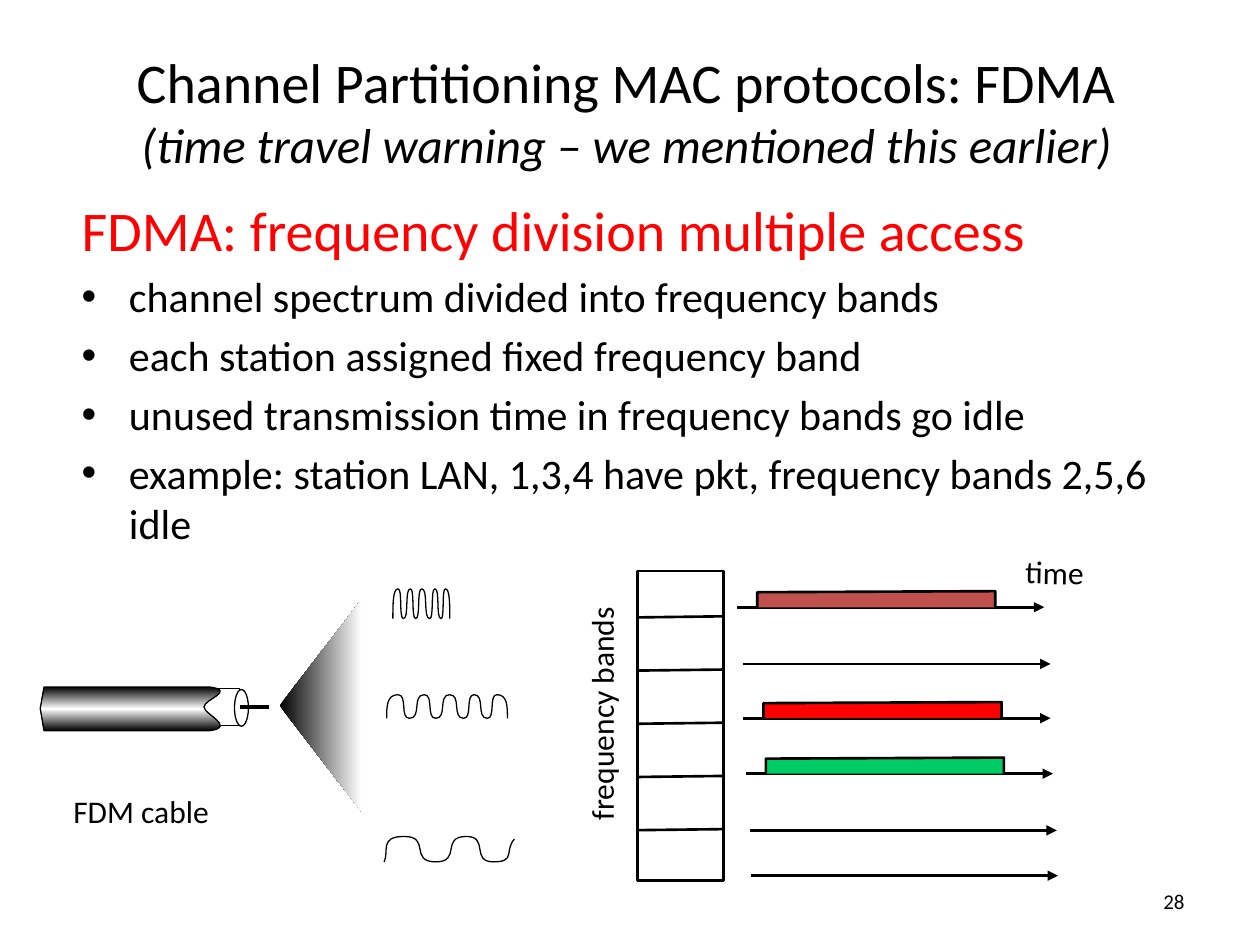
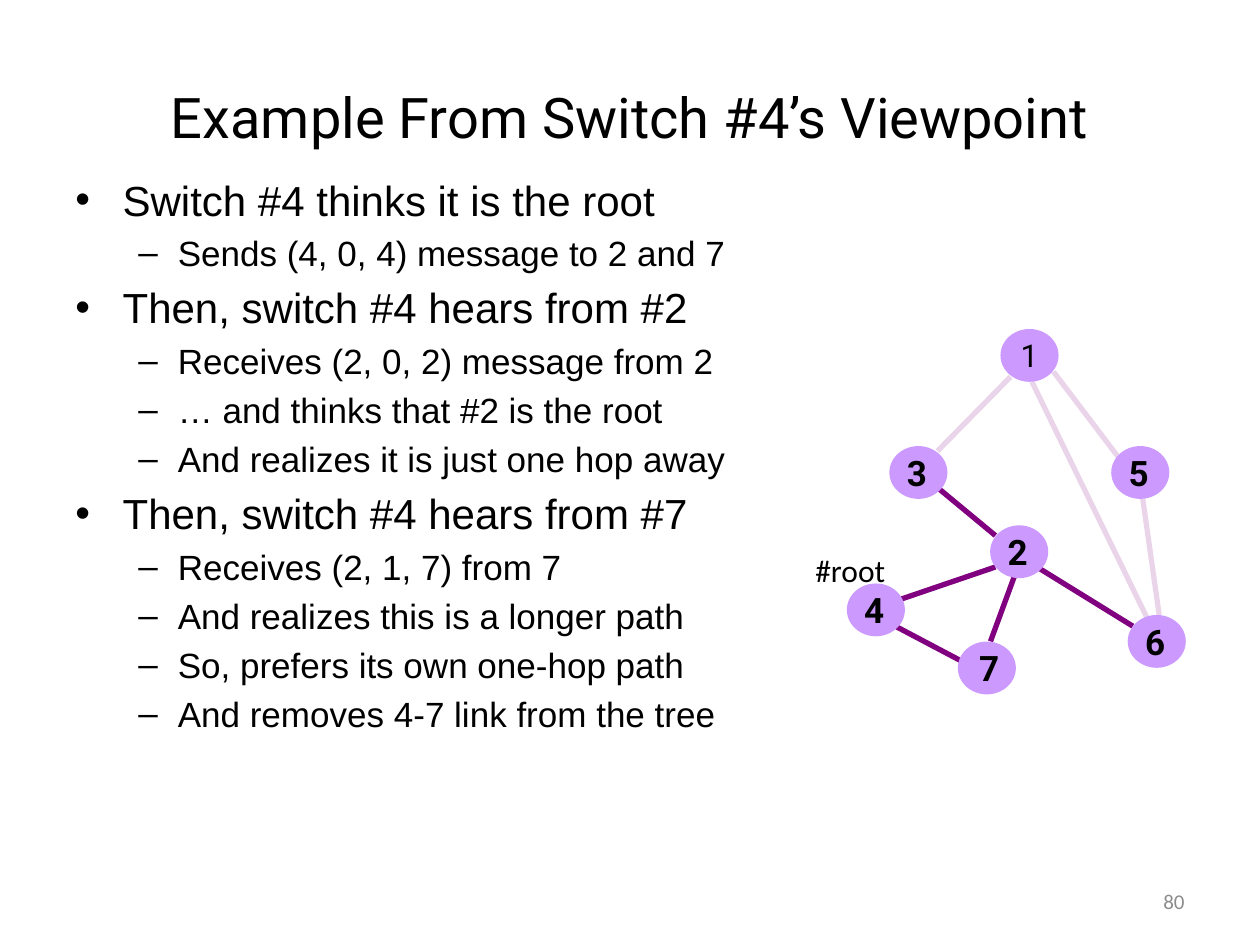
from dataclasses import dataclass
from itertools import pairwise

from lxml.etree import SubElement
from pptx import Presentation
from pptx.dml.color import RGBColor
from pptx.enum.shapes import MSO_CONNECTOR, MSO_SHAPE
from pptx.enum.text import MSO_ANCHOR, MSO_AUTO_SIZE, PP_ALIGN
from pptx.oxml.ns import qn
from pptx.util import Pt


@dataclass(frozen=True)
class Theme:
    black: str = "000000"
    white: str = "FFFFFF"
    red: str = "FF0000"
    brick: str = "C0504D"
    green: str = "00CC66"
    grey: str = "8C8C8C"
    node: str = "CC99FF"
    edge: str = "800080"
    font: str = "Calibri"
    node_font: str = "Roboto"
    body_font: str = "Arial"
    title: int = 32
    subtitle: int = 28
    body: int = 24
    detail: int = 20
    label: int = 18
    footer: int = 12
    thin: float = 0.75
    line: float = 1.5
    cable_core: float = 2.25
    edge_width: float = 3


THEME = Theme()


# Text
def write_text(paragraph, text, size=THEME.label, font=THEME.font, color=THEME.black,
               bold=False, italic=False, align=PP_ALIGN.LEFT):
    paragraph.alignment = align
    run = paragraph.add_run()
    run.text = text
    run.font.size = Pt(size)
    run.font.name = font
    run.font.bold = bold
    run.font.italic = italic
    run.font.color.rgb = RGBColor.from_string(color)


def add_box(slide, left, top, width, height, wrap=True):
    shape = slide.shapes.add_textbox(Pt(left), Pt(top), Pt(width), Pt(height))
    shape.text_frame.word_wrap = wrap
    return shape


def add_label(slide, text, left, top, width, height=29, rotation=0, wrap=False,
              **text_format):
    shape = add_box(slide, left, top, width, height, wrap)
    shape.rotation = rotation
    write_text(shape.text_frame.paragraphs[0], text, **text_format)


def place_title(slide, left, top, width, height=90):
    title = slide.shapes.title
    title.left, title.top, title.width, title.height = map(Pt, (left, top, width, height))
    frame = title.text_frame
    frame.auto_size = MSO_AUTO_SIZE.NONE
    frame.vertical_anchor = MSO_ANCHOR.MIDDLE
    return frame.paragraphs[0]


def add_page_number(slide, number, color):
    frame = add_box(slide, 516, 500.5, 168, 29).text_frame
    frame.vertical_anchor = MSO_ANCHOR.MIDDLE
    write_text(frame.paragraphs[0], number, size=THEME.footer, color=color,
               align=PP_ALIGN.RIGHT)


def add_body(slide, box, lines):
    """Each line is (text, bullet, text format); a dash marks the second level."""
    frame = add_box(slide, *box).text_frame
    for index, (text, bullet, text_format) in enumerate(lines):
        paragraph = frame.add_paragraph() if index else frame.paragraphs[0]
        paragraph.space_before = Pt(text_format["size"] * 0.2)
        write_text(paragraph, text, **text_format)
        second_level = bullet == "–"
        paragraph.level = int(second_level)
        properties = paragraph._p.get_or_add_pPr()
        properties.set("marL", str(Pt(58.5 if second_level else 27)))
        properties.set("indent", str(Pt(-22.5 if second_level else -27)))
        if bullet:
            SubElement(properties, qn("a:buFont"), typeface="Arial")
            SubElement(properties, qn("a:buChar"), char=bullet)


# Shapes and lines
def style_shape(shape, fill=None, line=None):
    shape.shadow.inherit = False
    if isinstance(fill, str):
        shape.fill.solid()
        shape.fill.fore_color.rgb = RGBColor.from_string(fill)
    elif fill is None:
        shape.fill.background()
    if line:
        shape.line.color.rgb = RGBColor.from_string(THEME.black)
        shape.line.width = Pt(line)
    else:
        shape.line.fill.background()
    return shape


def add_preset(slide, kind, left, top, width, height, fill, line=None):
    shape = slide.shapes.add_shape(kind, Pt(left), Pt(top), Pt(width), Pt(height))
    return style_shape(shape, fill, line)


def add_outline(slide, start, segments, fill=None, line=None, gradient=None, angle=0,
                close=False):
    """A segment of one point is straight; one of three points is a cubic curve."""
    builder = slide.shapes.build_freeform(*map(Pt, start))
    points = [(Pt(x), Pt(y)) for segment in segments for x, y in segment]
    builder.add_line_segments(points, close=close)
    shape = builder.convert_to_shape()
    steps = iter(list(shape._element.spPr.iter(qn("a:lnTo"))))
    for segment in segments:
        step = next(steps)
        if len(segment) == 3:
            step.tag = qn("a:cubicBezTo")
            for _ in range(2):
                control = next(steps)
                step.append(control[0])
                control.getparent().remove(control)
    if gradient:
        set_gradient(shape, gradient, angle)
    return style_shape(shape, gradient or fill, line)


def set_gradient(shape, colors, angle):
    shape.fill.gradient()
    shape.fill.gradient_angle = angle
    stops = shape._element.spPr.find(qn("a:gradFill")).find(qn("a:gsLst"))
    stops.clear()
    for index, color in enumerate(colors):
        position = 100000 * index // (len(colors) - 1)
        stop = SubElement(stops, qn("a:gs"), pos=str(position))
        SubElement(stop, qn("a:srgbClr"), val=color)


def add_line(slide, start, end, color=THEME.black, width=THEME.line, opacity=None,
             arrow=False):
    connector = slide.shapes.add_connector(
        MSO_CONNECTOR.STRAIGHT, *map(Pt, (*start, *end)))
    connector.line.color.rgb = RGBColor.from_string(color)
    connector.line.width = Pt(width)
    line = connector.line._get_or_add_ln()
    if opacity:
        SubElement(line.find(".//" + qn("a:srgbClr")), qn("a:alpha"),
                   val=str(opacity * 1000))
    if arrow:
        SubElement(line, qn("a:tailEnd"), type="triangle")
    SubElement(connector._element.spPr, qn("a:effectLst"))


def add_wave(slide, turns, top, bottom, first=None, last=None):
    """Swings from bottom to top at each turn; first and last replace the end curves."""
    nodes = [(x, top if index % 2 else bottom) for index, x in enumerate(turns)]
    curves = []
    for (x0, y0), (x1, y1) in pairwise(nodes):
        reach = 0.85 * (x1 - x0)
        curves.append([(x0 + reach, y0), (x1 - reach, y1), (x1, y1)])
    (x0, y0), (x1, y1) = nodes[0], nodes[1]
    curves[0] = first or [(x0, (y0 + y1) / 2), (x0, y1), (x1, y1)]
    (x0, y0), (x1, y1) = nodes[-2:]
    curves[-1] = last or [(x1, y0), (x1, (y0 + y1) / 2), (x1, y1)]
    add_outline(slide, nodes[0], curves, line=THEME.thin)


# Parts of the FDMA diagram
def add_frequency_bands(slide):
    left, right = 364.2, 413.6
    add_preset(slide, MSO_SHAPE.RECTANGLE, left, 326.2, right - left, 177.1,
               THEME.white, THEME.line)
    for band in range(5):
        y = 352.8 + 30.4 * band
        add_line(slide, (left, y), (right, y - 0.6))

    timelines = [(421.2, 347, THEME.brick), (424.8, 379.4, None), (424.8, 410.4, THEME.red),
                 (426.2, 442.1, THEME.green), (428.4, 474.5, None), (429.1, 500.4, None)]
    for x, y, packet in timelines:
        add_line(slide, (x, y), (x + 175.5, y), arrow=True)
        if packet:
            start, end = x + 11.5, x + 147.5
            add_outline(slide, (start, y), [[(start, y - 8.6)], [(end, y - 9.2)], [(end, y)]],
                        packet, THEME.line)
    add_label(slide, "frequency bands", 275, 392.5, 137.5, rotation=270)
    add_label(slide, "time", 578.9, 312.4, 49, rotation=1.1)


def add_cable(slide):
    add_outline(slide, (206.5, 342.7), [[(159.8, 403.2)], [(206.5, 463.7)]],
                gradient=(THEME.black, THEME.white), close=True)
    add_preset(slide, MSO_SHAPE.RECTANGLE, 116, 393.3, 21, 21.5, THEME.white, THEME.thin)
    sheath = [[(23, 404.8)], [(25.2, 417.6)], [(119.5, 417.6)],
              [(135.4, 415.5), (116.6, 408.2), (116.6, 404)],
              [(116.6, 399.6), (135.4, 394.6), (119.5, 392.5)]]
    add_outline(slide, (25.2, 392.5), sheath, line=THEME.thin, angle=90, close=True,
                gradient=(THEME.black, THEME.white, THEME.black))
    add_preset(slide, MSO_SHAPE.OVAL, 134, 394, 8, 21, THEME.white, THEME.thin)
    add_line(slide, (137, 404), (154, 404), width=THEME.cable_core)
    add_label(slide, "FDM cable", 34.8, 449.2, 93)


def build_fdma_slide(slide):
    title = place_title(slide, 18, 18, 680)
    write_text(title, "Channel Partitioning MAC protocols: FDMA", size=THEME.title,
               align=PP_ALIGN.CENTER)
    title.add_line_break()
    write_text(title, "(time travel warning – we mentioned this earlier)",
               size=THEME.subtitle, italic=True, align=PP_ALIGN.CENTER)
    facts = ["channel spectrum divided into frequency bands",
             "each station assigned fixed frequency band",
             "unused transmission time in frequency bands go idle",
             "example: station LAN, 1,3,4 have pkt, frequency bands 2,5,6 idle"]
    heading = ("FDMA: frequency division multiple access", None,
               {"size": THEME.title, "color": THEME.red})
    add_body(slide, (39.6, 108, 647.3, 366),
             [heading] + [(fact, "•", {"size": THEME.body}) for fact in facts])
    add_frequency_bands(slide)
    add_cable(slide)
    add_wave(slide, [221, 227.5, 234, 242.5, 249, 257, 265, 271, 278.5, 284, 290],
             397, 410.5)
    add_wave(slide, [224.5, 227.5, 230.5, 234.5, 237.5, 241, 245.5, 248.5, 252, 254.5, 257],
             336.5, 353.5)
    add_wave(slide, [219.5, 231, 249, 266.5, 282, 294], 478, 492.5,
             first=[(222.5, 486.5), (216.5, 478), (231, 478)],
             last=[(295, 492.5), (288, 486), (294, 479.5)])
    add_page_number(slide, "28", THEME.black)


# Parts of the spanning tree slide
def add_switch_network(slide):
    spare_links = [((577.5, 215.3), (535.7, 257.8)), ((602, 212.4), (640.8, 263.5)),
                   ((653, 285), (662.4, 351.4)), ((589.7, 218.2), (656, 354.2))]
    known_links = [((535.7, 278.6), (568.8, 306)), ((592.6, 324), (647.3, 357.8)),
                   ((514, 342.7), (568.8, 324)), ((566, 366.5), (580.3, 327.6)),
                   ((550.8, 378.5), (511.2, 357.6))]
    for start, end in spare_links + known_links:
        add_line(slide, start, end, THEME.edge, THEME.edge_width, opacity=17)
    for start, end in known_links:
        add_line(slide, start, end, THEME.edge, THEME.edge_width)

    root_shape = add_preset(slide, MSO_SHAPE.OVAL, 571.7, 188, 33.2, 30.2, THEME.node)
    frame = root_shape.text_frame
    frame.word_wrap = False
    frame.vertical_anchor = MSO_ANCHOR.MIDDLE
    write_text(frame.paragraphs[0], "1", font=THEME.node_font, align=PP_ALIGN.CENTER)

    # Number, left, top and indent of the number
    switches = [("5", 635, 254.9, 2.7), ("7", 547.3, 366.6, 5), ("2", 565.8, 300.2, 2.7),
                ("4", 483.9, 333.4, 2.7), ("3", 508.2, 254.9, 2.7), ("6", 644.4, 351.4, 2.7)]
    for number, left, top, indent in switches:
        add_preset(slide, MSO_SHAPE.OVAL, left, top, 33.2, 30.2, THEME.node)
        add_label(slide, number, left + indent, top - 0.6, 26, 31, size=THEME.detail,
                  font=THEME.node_font, bold=True, align=PP_ALIGN.CENTER)
    add_label(slide, "#root", 458.8, 311.2, 58.3, wrap=True)


def build_viewpoint_slide(slide):
    write_text(place_title(slide, 36, 21.6, 648), "Example From Switch #4’s Viewpoint",
               size=THEME.title, font=THEME.node_font, align=PP_ALIGN.CENTER)
    steps = {
        "Switch #4 thinks it is the root": ["Sends (4, 0, 4) message to 2 and 7"],
        "Then, switch #4 hears from #2": ["Receives (2, 0, 2) message from 2",
                                          "… and thinks that #2 is the root",
                                          "And realizes it is just one hop away"],
        "Then, switch #4 hears from #7": ["Receives (2, 1, 7) from 7",
                                          "And realizes this is a longer path",
                                          "So, prefers its own one-hop path",
                                          "And removes 4-7 link from the tree"],
    }
    lines = []
    for step, details in steps.items():
        lines.append((step, "•", {"size": THEME.body, "font": THEME.body_font}))
        lines += [(detail, "–", {"size": THEME.detail, "font": THEME.body_font})
                  for detail in details]
    add_body(slide, (36, 96, 439, 432), lines)
    add_switch_network(slide)
    add_page_number(slide, "80", THEME.grey)


def main():
    presentation = Presentation()
    presentation.slide_width, presentation.slide_height = Pt(720), Pt(540)
    title_only = presentation.slide_layouts[5]
    for build in (build_fdma_slide, build_viewpoint_slide):
        build(presentation.slides.add_slide(title_only))
    presentation.save("out.pptx")


if __name__ == "__main__":
    main()
